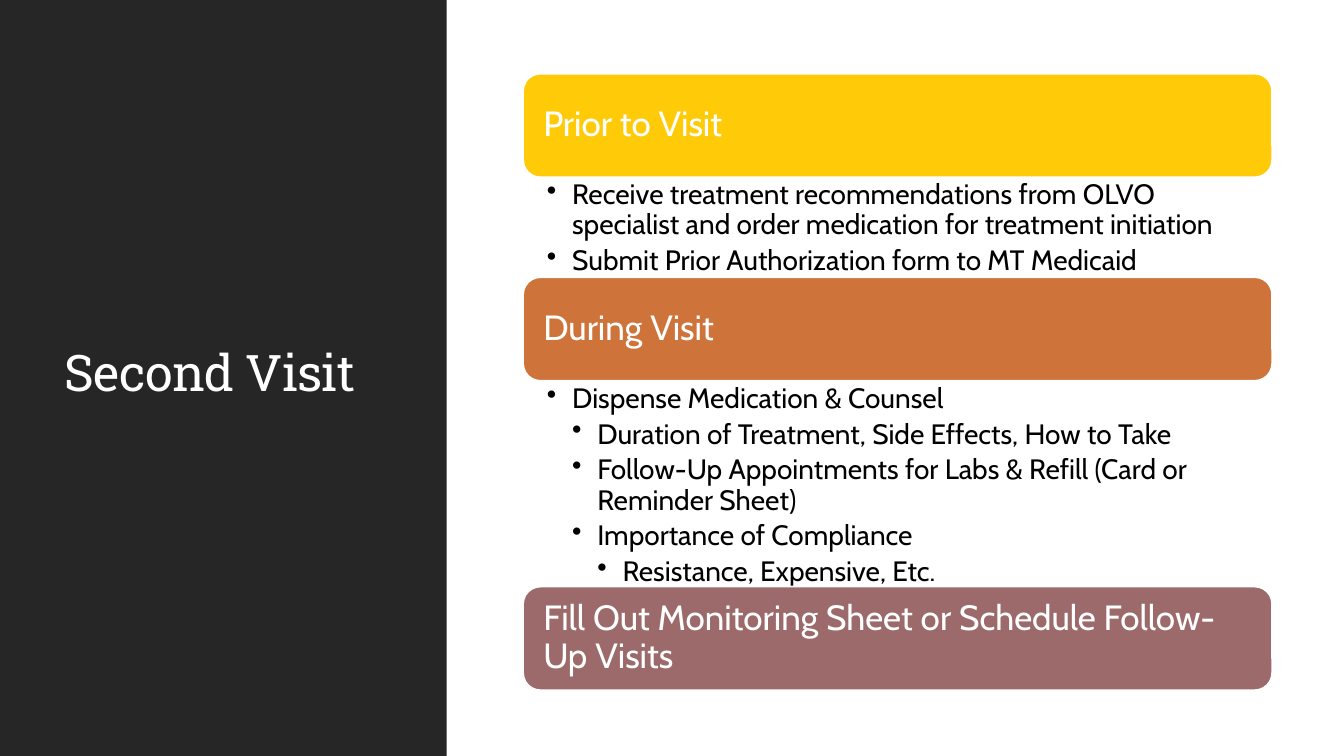
from lxml import etree
from pptx import Presentation
from pptx.dml import color
from pptx.enum import shapes, text
from pptx.oxml import ns
from pptx.util import Pt

WHITE = color.RGBColor(0xFF, 0xFF, 0xFF)
BLACK = color.RGBColor(0x00, 0x00, 0x00)
CHARCOAL = color.RGBColor(0x26, 0x26, 0x26)
YELLOW = color.RGBColor(0xFF, 0xCA, 0x08)
ORANGE = color.RGBColor(0xCE, 0x73, 0x39)
MAUVE = color.RGBColor(0x9C, 0x6A, 0x6A)

COLUMN_LEFT, COLUMN_TOP, COLUMN_WIDTH = 373.7, 52.6, 535
HEADER_HEIGHT = 74
INDENT = 18

STAGES = [
    ("Prior to Visit", YELLOW, 71.4, [
        (1, "Receive treatment recommendations from OLVO specialist "
            "and order medication for treatment initiation"),
        (1, "Submit Prior Authorization form to MT Medicaid"),
    ]),
    ("During Visit", ORANGE, 147, [
        (1, "Dispense Medication & Counsel"),
        (2, "Duration of Treatment, Side Effects, How to Take"),
        (2, "Follow-Up Appointments for Labs & Refill (Card or Reminder Sheet)"),
        (2, "Importance of Compliance"),
        (3, "Resistance, Expensive, Etc."),
    ]),
    ("Fill Out Monitoring Sheet or Schedule Follow-Up Visits", MAUVE, 0, []),
]


def apply_format(target, values):
    for name, value in values.items():
        setattr(target, name, value)


def format_frame(box, anchor, left, top, right, bottom):
    apply_format(box.text_frame, {
        "word_wrap": True,
        "auto_size": text.MSO_AUTO_SIZE.NONE,
        "vertical_anchor": anchor,
        "margin_left": Pt(left),
        "margin_top": Pt(top),
        "margin_right": Pt(right),
        "margin_bottom": Pt(bottom),
    })


def write_para(para, words, size, font, tint, space=0):
    apply_format(para, {
        "alignment": text.PP_ALIGN.LEFT,
        "line_spacing": 0.9,
        "space_before": Pt(0),
        "space_after": Pt(space),
    })
    span = para.add_run()
    span.text = words
    apply_format(span.font, {"size": Pt(size), "name": font})
    span.font.color.rgb = tint
    return span


def add_bullet(para, level):
    para.level = level
    properties = para._p.get_or_add_pPr()
    properties.set("marL", str(Pt(INDENT * level)))
    properties.set("indent", str(Pt(-INDENT)))
    etree.SubElement(properties, ns.qn("a:buChar")).set("char", "•")


def add_panel(page, kind, left, top, width, height, fill):
    box = page.shapes.add_shape(kind, Pt(left), Pt(top), Pt(width), Pt(height))
    box.shadow.inherit = False
    box.fill.solid()
    box.fill.fore_color.rgb = fill
    box.line.fill.background()
    return box


def add_title(page, words):
    box = page.shapes.add_textbox(Pt(39), Pt(41), Pt(242.6), Pt(454.3))
    format_frame(box, text.MSO_ANCHOR.MIDDLE, 7.2, 3.6, 7.2, 3.6)
    span = write_para(box.text_frame.paragraphs[0], words, 36, "Roboto Slab", WHITE)
    span.font._element.set("spc", "-50")


def add_header(page, top, words, fill):
    box = add_panel(page, shapes.MSO_SHAPE.ROUNDED_RECTANGLE,
                    COLUMN_LEFT, top, COLUMN_WIDTH, HEADER_HEIGHT, fill)
    box.line.color.rgb = WHITE
    box.line.width = Pt(1.25)
    format_frame(box, text.MSO_ANCHOR.MIDDLE, 10.8, 7.2, 10.8, 7.2)
    write_para(box.text_frame.paragraphs[0], words, 25, "Cabin", WHITE)


def add_steps(page, top, height, steps):
    box = page.shapes.add_textbox(Pt(COLUMN_LEFT), Pt(top), Pt(COLUMN_WIDTH), Pt(height))
    format_frame(box, text.MSO_ANCHOR.TOP, 17, 2.3, 13.7, 2.3)
    frame = box.text_frame
    for index, (level, words) in enumerate(steps):
        para = frame.add_paragraph() if index else frame.paragraphs[0]
        write_para(para, words, 20, "Cabin", BLACK, space=4)
        add_bullet(para, level)


def main():
    deck = Presentation()
    apply_format(deck, {"slide_width": Pt(960), "slide_height": Pt(540)})
    page = deck.slides.add_slide(deck.slide_layouts[6])
    page.background.fill.solid()
    page.background.fill.fore_color.rgb = WHITE
    add_panel(page, shapes.MSO_SHAPE.RECTANGLE, 0, 0, 319, 540, CHARCOAL)
    add_title(page, "Second Visit")
    top = COLUMN_TOP
    for words, fill, steps_height, steps in STAGES:
        add_header(page, top, words, fill)
        top += HEADER_HEIGHT
        if steps:
            add_steps(page, top, steps_height, steps)
        top += steps_height
    deck.save("out.pptx")


if __name__ == "__main__":
    main()
